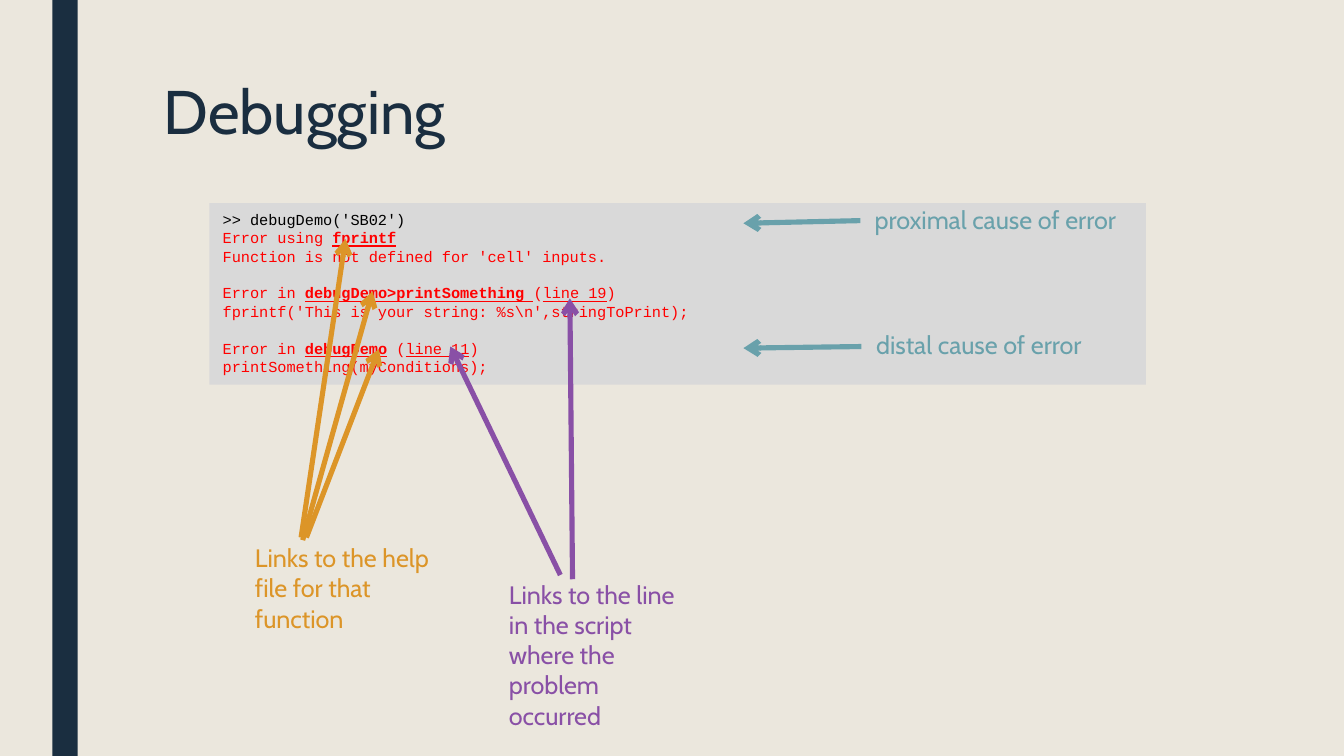
"""Build the Debugging slide: an error message with annotated links and causes."""
from dataclasses import dataclass

from lxml.etree import SubElement
from pptx import Presentation
from pptx.dml.color import RGBColor
from pptx.enum.shapes import MSO_CONNECTOR, MSO_SHAPE
from pptx.enum.text import MSO_ANCHOR, PP_ALIGN
from pptx.oxml.ns import qn
from pptx.util import Cm, Pt


@dataclass(frozen=True)
class Theme:
    """Colours, fonts and type sizes of the slide."""
    paper: str = "EBE7DD"
    navy: str = "1A2E40"
    panel: str = "D9D9D9"
    prompt: str = "000000"
    error: str = "FF0000"
    help: str = "DC9528"
    line: str = "8950A6"
    cause: str = "69A1AB"
    font: str = "Cabin"
    code_font: str = "Courier New"
    title_size: float = 33
    note_size: float = 13.5
    code_size: float = 8.2
    code_leading: float = 9.9
    arrow_width: float = 2.75


THEME = Theme()
PLAIN, LINK, FUNCTION = "plain", "link", "function"


def rgb(color):
    """Turn a hex string into a colour."""
    return RGBColor.from_string(color)


def set_font(p, name, size, color):
    """Set the font of a whole paragraph."""
    p.font.name = name
    p.font.size = Pt(size)
    p.font.color.rgb = rgb(color)


def add_block(s, box, color):
    """Add a flat rectangle without outline."""
    sp = s.shapes.add_shape(MSO_SHAPE.RECTANGLE, *map(Cm, box))
    sp.shadow.inherit = False
    sp.fill.solid()
    sp.fill.fore_color.rgb = rgb(color)
    sp.line.fill.background()
    return sp


def add_title(s, text, box):
    """Place and format the title placeholder."""
    sp = s.shapes.title
    sp.left, sp.top, sp.width, sp.height = map(Cm, box)
    tf = sp.text_frame
    tf.text = text
    tf.vertical_anchor = MSO_ANCHOR.TOP
    p = tf.paragraphs[0]
    p.alignment = PP_ALIGN.LEFT
    p.line_spacing = 0.89
    set_font(p, THEME.font, THEME.title_size, THEME.navy)


def add_code(s, box, blocks):
    """Add the code panel, with a one-line gap between blocks of lines."""
    tf = add_block(s, box, THEME.panel).text_frame
    tf.word_wrap = True
    tf.vertical_anchor = MSO_ANCHOR.TOP
    p = tf.paragraphs[0]
    for b, block in enumerate(blocks):
        for i, (color, *parts) in enumerate(block):
            if b or i:
                p = tf.add_paragraph()
            p.alignment = PP_ALIGN.LEFT
            p.line_spacing = Pt(THEME.code_leading)
            p.space_before = Pt(THEME.code_leading if b and not i else 0)
            set_font(p, THEME.code_font, THEME.code_size, color)
            for text, style in parts:
                r = p.add_run()
                r.text = text
                r.font.bold = style == FUNCTION
                r.font.underline = style != PLAIN


def add_note(s, text, box, color):
    """Add a wrapped annotation."""
    tf = s.shapes.add_textbox(*map(Cm, box)).text_frame
    tf.word_wrap = True
    p = tf.paragraphs[0]
    p.text = text
    set_font(p, THEME.font, THEME.note_size, color)


def add_arrow(s, start, end, color):
    """Add a straight arrow that points at its end."""
    c = s.shapes.add_connector(MSO_CONNECTOR.STRAIGHT, *map(Cm, start + end))
    c.line.color.rgb = rgb(color)
    c.line.width = Pt(THEME.arrow_width)
    SubElement(c.line._get_or_add_ln(), qn("a:tailEnd"), type="arrow")
    SubElement(c._element.spPr, qn("a:effectLst"))


def error_in(function, line):
    """Return the code line that names where an error arose."""
    gap = "" if function.endswith(" ") else " "
    return (THEME.error, ("Error in ", PLAIN), (function, FUNCTION),
            (gap + "(", PLAIN), (line, LINK), (")", PLAIN))


def main():
    """Build and save the slide."""
    prs = Presentation()
    prs.slide_width, prs.slide_height = Cm(25.4), Cm(14.29)
    s = prs.slides.add_slide(prs.slide_layouts[5])
    s.background.fill.solid()
    s.background.fill.fore_color.rgb = rgb(THEME.paper)

    add_block(s, (0.99, 0, 0.48, 14.29), THEME.navy)
    add_title(s, "Debugging", (2.84, 1.42, 20.02, 3.1))
    add_code(s, (3.96, 3.84, 17.7, 3.43), [
        [(THEME.prompt, (">> debugDemo('SB02')", PLAIN)),
         (THEME.error, ("Error using ", PLAIN), ("fprintf", FUNCTION)),
         (THEME.error, ("Function is not defined for 'cell' inputs.", PLAIN))],
        [error_in("debugDemo>printSomething ", "line 19"),
         (THEME.error,
          ("fprintf('This is your string: %s\\n',stringToPrint);", PLAIN))],
        [error_in("debugDemo", "line 11"),
         (THEME.error, ("printSomething(myConditions);", PLAIN))],
    ])

    notes = [
        ("Links to the help file for that function",
         (4.57, 10.13, 4.01, 1.98), THEME.help,
         [((5.69, 10.16), (6.53, 4.52)),
          ((5.72, 10.21), (7.04, 5.51)),
          ((5.79, 10.16), (7.16, 6.6))]),
        ("Links to the line in the script where the problem occurred",
         (9.37, 10.82, 4.01, 2.57), THEME.line,
         [((10.82, 10.95), (10.77, 5.64)),
          ((10.59, 10.87), (8.51, 6.55))]),
        ("proximal cause of error", (16.28, 3.73, 5.18, 0.84), THEME.cause,
         [((16.26, 4.17), (14.05, 4.22))]),
        ("distal cause of error", (16.31, 6.1, 5.18, 0.84), THEME.cause,
         [((16.28, 6.55), (14.05, 6.58))]),
    ]
    for text, box, color, arrows in notes:
        add_note(s, text, box, color)
        for start, end in arrows:
            add_arrow(s, start, end, color)

    prs.save("out.pptx")


if __name__ == "__main__":
    main()
